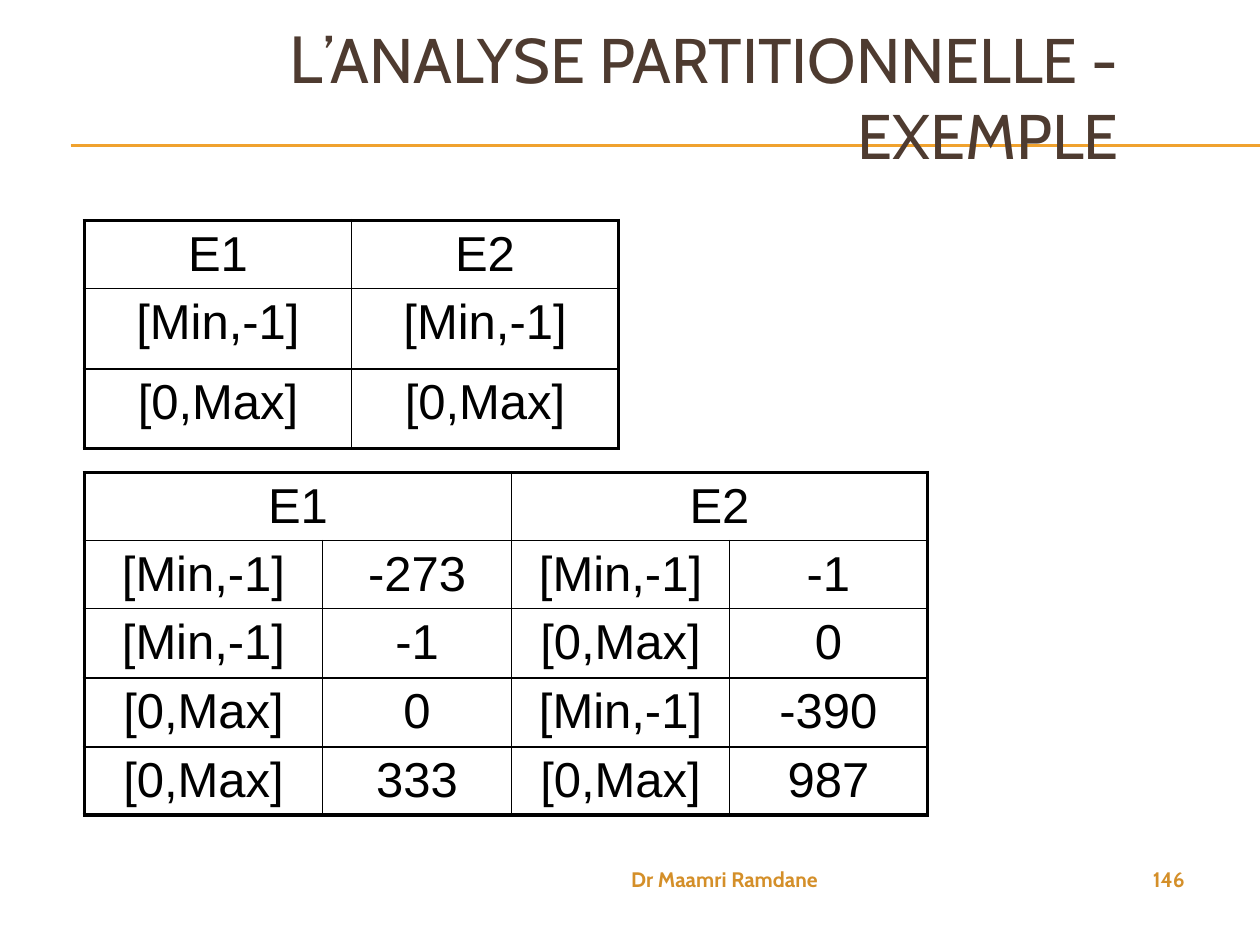
from lxml import etree
from pptx import Presentation
from pptx.dml.color import RGBColor
from pptx.enum import shapes, text
from pptx.oxml.ns import qn
from pptx.util import Inches, Pt

COLORS = {"title": "4E3B30", "rule": "F0A22E", "footer": "D48F29", "ink": "000000"}
RIGHT, CENTER = text.PP_ALIGN.RIGHT, text.PP_ALIGN.CENTER
OUTER, INNER = 2.25, 1

TITLE = [("L", 38), ("’ANALYSE PARTITIONNELLE - EXEMPLE", 36)]
RULES = [1.15, 1.16]
FOOTERS = [("Dr Maamri Ramdane", 3.42, 3.17), ("146", 7.17, 2.33)]
NEG, POS = "[Min,-1]", "[0,Max]"
TABLES = [
    {"at": (0.67, 1.75), "cols": [2.12, 2.12], "rows": [0.54, 0.64, 0.63], "span": 1,
     "cells": [["E1", "E2"], [NEG, NEG], [POS, POS]]},
    {"at": (0.67, 3.75), "cols": [1.89, 1.5, 1.73, 1.57],
     "rows": [0.54, 0.54, 0.55, 0.55, 0.54], "span": 2,
     "cells": [["E1", "", "E2", ""],
               [NEG, "-273", NEG, "-1"],
               [NEG, "-1", POS, "0"],
               [POS, "0", NEG, "-390"],
               [POS, "333", POS, "987"]]},
]


def rgb(name):
    return RGBColor.from_string(COLORS[name])


def write(tf, runs, font="Cabin", color="ink", align=RIGHT, bold=False):
    """Fill the first paragraph with (text, size) runs."""
    p = tf.paragraphs[0]
    p.alignment = align
    for words, size in runs:
        r = p.add_run()
        r.text = words
        r.font.name, r.font.size, r.font.bold = font, Pt(size), bold
        r.font.color.rgb = rgb(color)


def set_borders(cell, **widths):
    tc_pr = cell._tc.get_or_add_tcPr()
    for side in "LRTB":
        ln = etree.SubElement(tc_pr, qn(f"a:ln{side}"), w=str(Pt(widths[side])))
        fill = etree.SubElement(ln, qn("a:solidFill"))
        etree.SubElement(fill, qn("a:srgbClr"), val=COLORS["ink"])


def add_grid(s, at, cols, rows, span, cells):
    """Add a bordered table whose header cells each cover span columns."""
    size = (sum(cols), sum(rows))
    table = s.shapes.add_table(len(rows), len(cols), *map(Inches, at + size)).table
    table.first_row = table.horz_banding = False
    for col, width in zip(table.columns, cols):
        col.width = Inches(width)
    for row, height in zip(table.rows, rows):
        row.height = Inches(height)
    last_row, last_col = len(rows) - 1, len(cols) - 1
    for i, line in enumerate(cells):
        for j, words in enumerate(line):
            cell = table.cell(i, j)
            edge_right = j + (span if i == 0 else 1) > last_col
            set_borders(cell,
                        L=OUTER if j == 0 else INNER,
                        R=OUTER if edge_right else INNER,
                        T=OUTER if i == 0 else INNER,
                        B=OUTER if i == last_row else INNER)
            cell.fill.background()
            if words:
                write(cell.text_frame, [(words, 28)], font="Arial", align=CENTER)
    if span > 1:
        for j in range(0, len(cols), span):
            table.cell(0, j).merge(table.cell(0, j + span - 1))


prs = Presentation()
prs.slide_width, prs.slide_height = Inches(10), Inches(7.5)
s = prs.slides.add_slide(prs.slide_layouts[5])

for y in RULES:
    rule = s.shapes.add_connector(shapes.MSO_CONNECTOR.STRAIGHT,
                                  Inches(0.56), Inches(y), Inches(10), Inches(y))
    rule.line.color.rgb, rule.line.width = rgb("rule"), Pt(0.75)
    etree.SubElement(rule._element.spPr, qn("a:effectLst"))
    s.shapes._spTree.insert(2, rule._element)  # rules lie behind the title

title = s.shapes.title
title.left, title.top, title.width, title.height = map(Inches, (0.21, 0.25, 8.77, 1))
title.text_frame.vertical_anchor = text.MSO_ANCHOR.MIDDLE
title.text_frame.auto_size = text.MSO_AUTO_SIZE.NONE
write(title.text_frame, TITLE, color="title")

for spec in TABLES:
    add_grid(s, **spec)

for words, left, width in FOOTERS:
    box = s.shapes.add_textbox(*map(Inches, (left, 6.83, width, 0.5)))
    box.text_frame.word_wrap = True
    write(box.text_frame, [(words, 12)], color="footer", bold=True)

prs.save("out.pptx")
